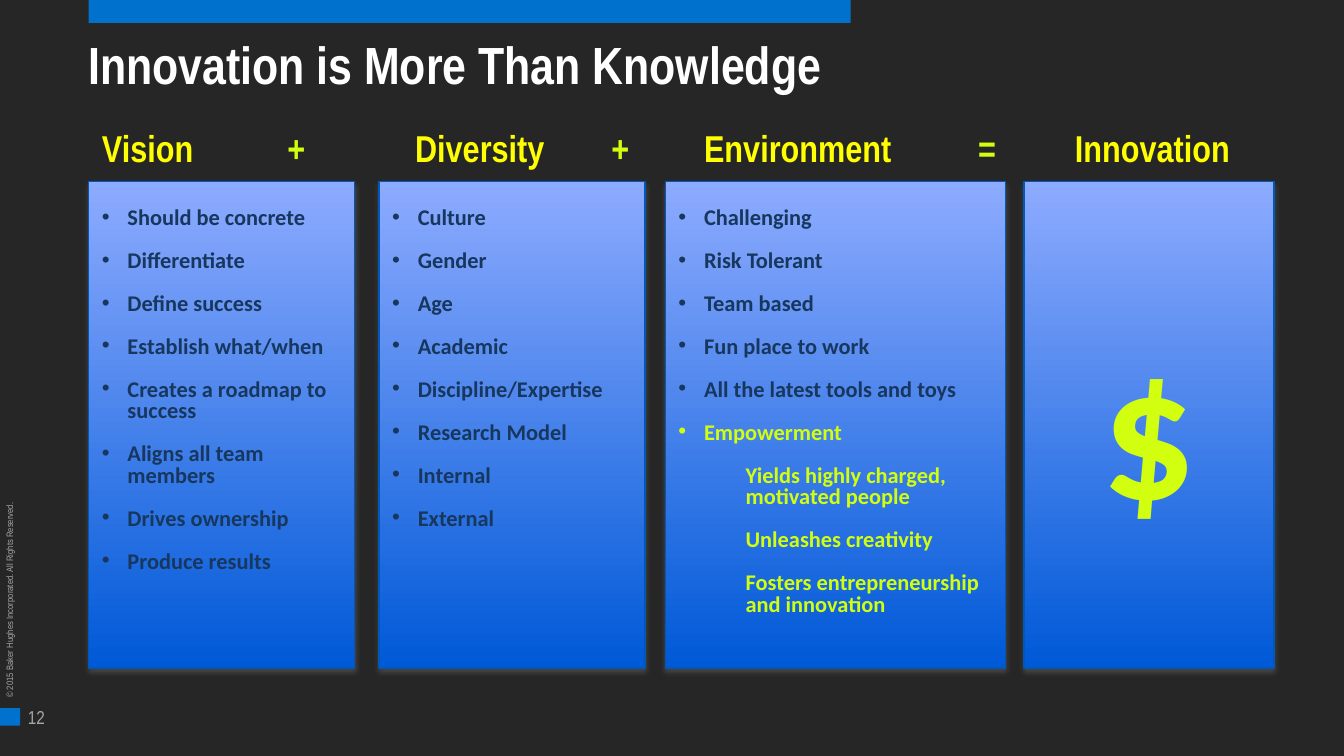
"""Build the slide on what innovation needs beyond knowledge."""
from typing import NamedTuple

from lxml.etree import SubElement
from pptx import Presentation
from pptx.dml.color import RGBColor
from pptx.enum.shapes import MSO_SHAPE
from pptx.enum.text import MSO_ANCHOR, PP_ALIGN
from pptx.oxml.ns import qn
from pptx.util import Inches, Pt

DARK = RGBColor(0x26, 0x26, 0x26)
BLUE = RGBColor(0x00, 0x72, 0xCE)
EDGE = RGBColor(0x00, 0x58, 0xBB)
PALE = RGBColor(0x8D, 0xAB, 0xFF)
DEEP = RGBColor(0x00, 0x59, 0xD7)
NAVY = RGBColor(0x17, 0x37, 0x5E)
LIME = RGBColor(0xD2, 0xFF, 0x0F)
YELLOW = RGBColor(0xFF, 0xFF, 0x00)
WHITE = RGBColor(0xFF, 0xFF, 0xFF)
GRAY = RGBColor(0xA6, 0xA6, 0xA6)
HEAD = "Arial Narrow"
BODY = "Calibri"


class Item(NamedTuple):
    text: str
    color: RGBColor = NAVY
    sub: bool = False


class Panel(NamedTuple):
    left: float
    width: float
    items: tuple


class Label(NamedTuple):
    text: str
    left: float
    top: float
    width: float
    height: float
    size: int
    color: RGBColor
    bold: bool = True
    turn: int = 0


PANELS = (
    Panel(0.66, 1.98, tuple(map(Item, (
        "Should be concrete", "Differentiate", "Define success", "Establish what/when",
        "Creates a roadmap to success", "Aligns all team members",
        "Drives ownership", "Produce results")))),
    Panel(2.82, 1.98, tuple(map(Item, (
        "Culture", "Gender", "Age", "Academic", "Discipline/Expertise",
        "Research Model", "Internal", "External")))),
    Panel(4.95, 2.53, (
        *map(Item, ("Challenging", "Risk Tolerant", "Team based",
                    "Fun place to work", "All the latest tools and toys")),
        Item("Empowerment", LIME),
        Item("Yields highly charged, motivated people", LIME, True),
        Item("Unleashes creativity", LIME, True),
        Item("Fosters entrepreneurship and innovation", LIME, True))),
    Panel(7.62, 1.86, ()),
)
TERMS = (
    ("Vision", 0.66, 0.97, YELLOW), ("+", 2.04, 0.3, LIME),
    ("Diversity", 2.99, 1.26, YELLOW), ("+", 4.45, 0.3, LIME),
    ("Environment", 5.14, 1.69, YELLOW), ("=", 7.18, 0.3, LIME),
    ("Innovation", 7.9, 1.37, YELLOW),
)
LABELS = (
    Label("12", 0.11, 5.2, 0.6, 0.21, 10, GRAY, False),
    Label("© 2015 Baker Hughes Incorporated. All Rights Reserved.",
          -0.96, 4.16, 2.07, 0.19, 5, GRAY, False, 270),
    Label("Innovation is More Than Knowledge", 0.56, 0.23, 9, 0.49, 28, WHITE),
    *(Label(text, left, 0.88, width, 0.34, 20, color)
      for text, left, width, color in TERMS),
)


def add_run(para, text: str, face: str, size: int, color: RGBColor, bold: bool = True) -> None:
    """Add one styled run to a paragraph."""
    run = para.add_run()
    run.text = text
    run.font.name = face
    run.font.size = Pt(size)
    run.font.bold = bold
    run.font.color.rgb = color


def add_rect(slide, left: float, top: float, width: float, height: float):
    """Add a rectangle without shadow."""
    rect = slide.shapes.add_shape(
        MSO_SHAPE.RECTANGLE, Inches(left), Inches(top), Inches(width), Inches(height))
    rect.shadow.inherit = False
    return rect


def add_bar(slide, left: float, top: float, width: float, height: float) -> None:
    """Add a plain blue accent bar."""
    bar = add_rect(slide, left, top, width, height)
    bar.fill.solid()
    bar.fill.fore_color.rgb = BLUE
    bar.line.fill.background()


def add_label(slide, label: Label) -> None:
    """Add a line of text in its own box."""
    box = slide.shapes.add_textbox(
        Inches(label.left), Inches(label.top), Inches(label.width), Inches(label.height))
    box.rotation = label.turn
    frame = box.text_frame
    frame.word_wrap = True
    frame.vertical_anchor = MSO_ANCHOR.MIDDLE if label.size == 28 else MSO_ANCHOR.TOP
    add_run(frame.paragraphs[0], label.text, HEAD, label.size, label.color, label.bold)


def add_shade(shape) -> None:
    """Give a shape a soft gray shadow below it."""
    root = shape._element.spPr.find(qn("a:effectLst"))
    glow = SubElement(root, qn("a:outerShdw"), blurRad=str(Pt(3.1)),
                      dist=str(Pt(1.8)), dir="5400000", rotWithShape="0")
    tint = SubElement(glow, qn("a:srgbClr"), val="808080")
    SubElement(tint, qn("a:alpha"), val="35000")


def add_item(para, item: Item) -> None:
    """Fill one paragraph of a panel list."""
    props = para._p.get_or_add_pPr()
    if item.sub:
        para.level = 1
        props.set("marL", str(Inches(0.5)))
        props.set("indent", "0")
    else:
        props.set("marL", str(Inches(0.19)))
        props.set("indent", str(Inches(-0.19)))
        SubElement(props, qn("a:buFont"), typeface="Arial")
        SubElement(props, qn("a:buChar"), char="•")
    para.alignment = PP_ALIGN.LEFT
    para.line_spacing = 0.8
    add_run(para, item.text, BODY, 12, item.color)


def add_panel(slide, panel: Panel) -> None:
    """Add a gradient panel with its list, or the dollar sign."""
    rect = add_rect(slide, panel.left, 1.35, panel.width, 3.62)
    rect.fill.gradient()
    rect.fill.gradient_angle = 270
    for stop, color, spot in zip(rect.fill.gradient_stops, (PALE, DEEP), (0, 1)):
        stop.color.rgb = color
        stop.position = spot
    rect.line.color.rgb = EDGE
    rect.line.width = Pt(0.75)
    add_shade(rect)
    frame = rect.text_frame
    frame.word_wrap = True
    para = frame.paragraphs[0]
    if not panel.items:
        frame.vertical_anchor = MSO_ANCHOR.MIDDLE
        para.alignment = PP_ALIGN.CENTER
        add_run(para, "$", BODY, 100, LIME)
        return
    frame.vertical_anchor = MSO_ANCHOR.TOP
    frame.margin_top = Inches(0.2)
    for rank, item in enumerate(panel.items):
        if rank:
            para = frame.add_paragraph()
            para.space_before = Pt(11.5)
        add_item(para, item)


def main() -> None:
    """Draw the slide and save it."""
    deck = Presentation()
    deck.slide_width = Inches(10)
    deck.slide_height = Inches(10 * 9 / 16)
    slide = deck.slides.add_slide(deck.slide_layouts[6])
    slide.background.fill.solid()
    slide.background.fill.fore_color.rgb = DARK
    add_bar(slide, 0, 5.27, 0.15, 0.13)
    add_bar(slide, 0.66, 0, 5.67, 0.17)
    for panel in PANELS:
        add_panel(slide, panel)
    for label in LABELS:
        add_label(slide, label)
    deck.save("out.pptx")


if __name__ == "__main__":
    main()
